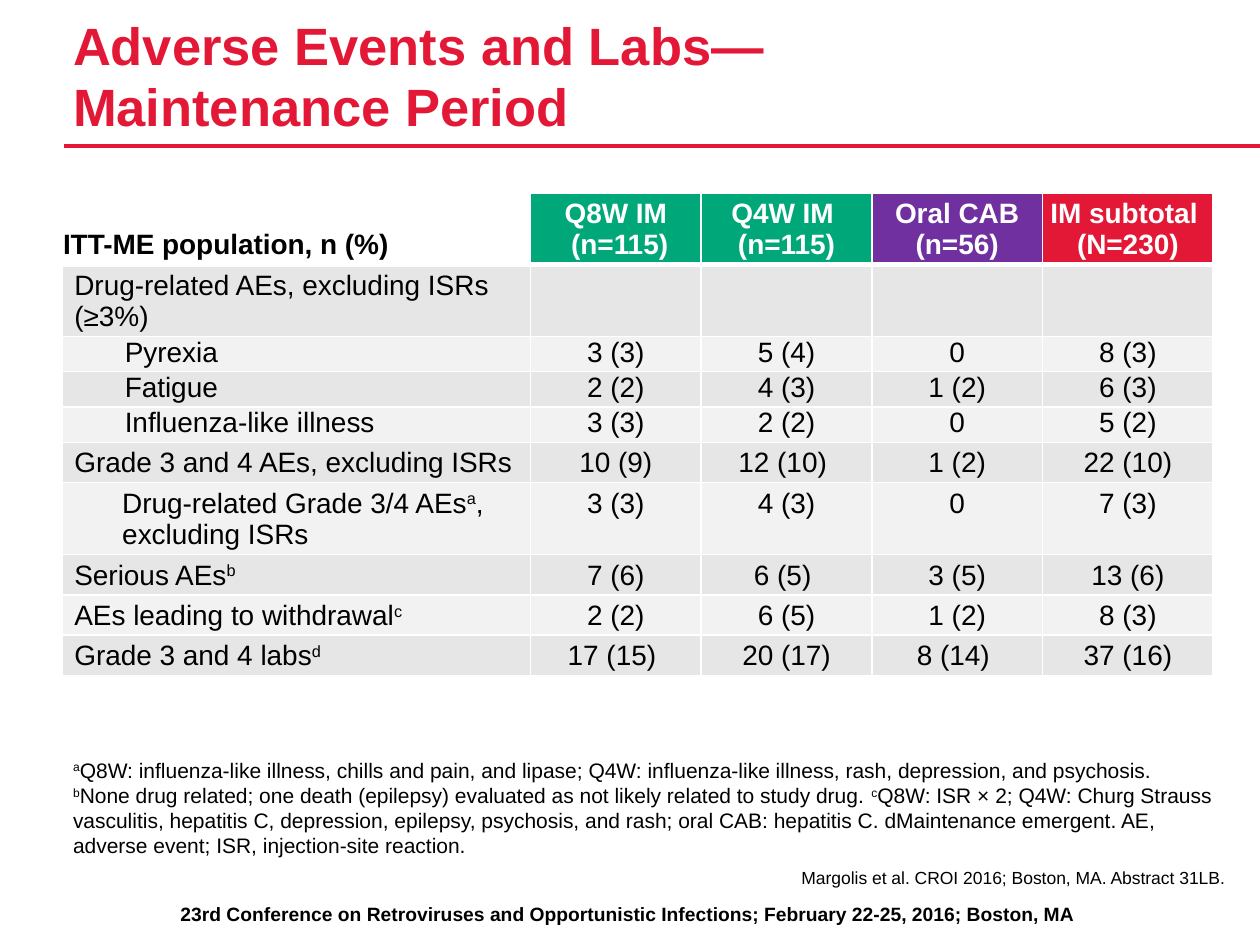
from dataclasses import dataclass

from lxml import etree
from pptx import Presentation
from pptx.dml.color import RGBColor
from pptx.enum import text
from pptx.oxml.ns import qn
from pptx.enum import shapes
from pptx.util import Inches, Pt


@dataclass(frozen=True)
class Theme:
    font: str = "Arial"
    red: str = "E31836"
    green: str = "00A779"
    purple: str = "7030A0"
    black: str = "000000"
    white: str = "FFFFFF"
    bands: tuple = ("E6E6E6", "F2F2F2")
    title: int = 30
    table: int = 16
    note: int = 12
    conference: int = 11
    citation: int = 10


THEME = Theme()
LEFT, CENTER, RIGHT = text.PP_ALIGN.LEFT, text.PP_ALIGN.CENTER, text.PP_ALIGN.RIGHT
BOTTOM = text.MSO_ANCHOR.BOTTOM

# Header text and fill for each column
HEADERS = [
    ("ITT-ME population, n (%)", None),
    ("Q8W IM\n (n=115)", THEME.green),
    ("Q4W IM \n(n=115)", THEME.green),
    ("Oral CAB\n(n=56)", THEME.purple),
    ("IM subtotal \n(N=230)", THEME.red),
]
# Row kind, height, label (superscripts between carets), one value per arm
ROWS = [
    ("main", 0.57, "Drug-related AEs, excluding ISRs (≥3%)", [""] * 4),
    ("event", 0.28, "Pyrexia", ["3 (3)", "5 (4)", "0", "8 (3)"]),
    ("event", 0.28, "Fatigue", ["2 (2)", "4 (3)", "1 (2)", "6 (3)"]),
    ("event", 0.28, "Influenza-like illness", ["3 (3)", "2 (2)", "0", "5 (2)"]),
    ("main", 0.32, "Grade 3 and 4 AEs, excluding ISRs",
     ["10 (9)", "12 (10) ", "1 (2)", "22 (10)"]),
    ("sub", 0.57, "Drug-related Grade 3/4 AEs^a^, excluding ISRs",
     ["3 (3)", "4 (3)", "0", "7 (3)"]),
    ("main", 0.32, "Serious AEs^b^", ["7 (6)", "6 (5) ", "3 (5)", "13 (6)"]),
    ("main", 0.32, "AEs leading to withdrawal^c^", ["2 (2)", "6 (5)", "1 (2)", "8 (3)"]),
    ("main", 0.32, "Grade 3 and 4 labs^d^", ["17 (15) ", "20 (17)", "8 (14) ", "37 (16)"]),
]
FOOTNOTE = (
    "^a^Q8W: influenza-like illness, chills and pain, and lipase; "
    "Q4W: influenza-like illness, rash, depression, and psychosis. \n"
    "^b^None drug related; one death (epilepsy) evaluated as not likely related to "
    "study drug. ^c^Q8W: ISR × 2; Q4W: Churg Strauss vasculitis, hepatitis C, "
    "depression, epilepsy, psychosis, and rash; oral CAB: hepatitis C. "
    "dMaintenance emergent. AE, adverse event; ISR, injection-site reaction."
)


def write(paragraph, content, size, color=THEME.black, bold=False, align=LEFT, spacing=None):
    """Fill a paragraph; parts between carets become superscripts."""
    for line_no, line in enumerate(content.split("\n")):
        if line_no:
            paragraph.add_line_break()
        for part_no, part in enumerate(line.split("^")):
            if not part:
                continue
            run = paragraph.add_run()
            run.text = part
            run.font.name, run.font.size, run.font.bold = THEME.font, Pt(size), bold
            run.font.color.rgb = RGBColor.from_string(color)
            if part_no % 2:
                run.font._element.set("baseline", "30000")
    paragraph.alignment = align
    if spacing:
        paragraph.line_spacing = Pt(spacing)


def set_margins(target, left, top, right, bottom):
    target.margin_left, target.margin_top = Inches(left), Inches(top)
    target.margin_right, target.margin_bottom = Inches(right), Inches(bottom)


def add_title(slide, box):
    title = slide.shapes.title
    title.left, title.top, title.width, title.height = map(Inches, box)
    frame = title.text_frame
    frame.auto_size, frame.vertical_anchor = text.MSO_AUTO_SIZE.NONE, BOTTOM
    set_margins(frame, 0, 0, 0, 0)
    write(frame.paragraphs[0], "Adverse Events and Labs—\nMaintenance Period",
          THEME.title, THEME.red, bold=True, spacing=35)


def add_rule(slide, left, right, y):
    rule = slide.shapes.add_connector(
        shapes.MSO_CONNECTOR.STRAIGHT, Inches(left), Inches(y), Inches(right), Inches(y))
    rule.line.color.rgb = RGBColor.from_string(THEME.red)
    rule.line.width = Pt(2)
    etree.SubElement(rule._element.spPr, qn("a:effectLst"))


def add_note(slide, box, content, size, anchor=text.MSO_ANCHOR.TOP, **style):
    frame = slide.shapes.add_textbox(*map(Inches, box)).text_frame
    frame.word_wrap, frame.vertical_anchor = True, anchor
    set_margins(frame, 0, 0, 0, 0)
    write(frame.paragraphs[0], content, size, **style)


def set_borders(cell, top, bottom):
    props = cell._tc.get_or_add_tcPr()
    for place, (side, width) in enumerate(
            [("lnL", 1), ("lnR", 1), ("lnT", top), ("lnB", bottom)]):
        line = etree.Element(qn(f"a:{side}"), w=str(Pt(width)))
        fill = etree.SubElement(line, qn("a:solidFill"))
        etree.SubElement(fill, qn("a:srgbClr"), val=THEME.white)
        props.insert(place, line)


def paint(cell, color):
    if color:
        cell.fill.solid()
        cell.fill.fore_color.rgb = RGBColor.from_string(color)
    else:
        cell.fill.background()


def fill_header(cell, content, color):
    paint(cell, color)
    set_borders(cell, 1, 3)
    set_margins(cell, 0.01, 0.04, 0.01, 0.03)
    cell.vertical_anchor = BOTTOM
    for number, line in enumerate(content.split("\n")):
        frame = cell.text_frame
        paragraph = frame.add_paragraph() if number else frame.paragraphs[0]
        write(paragraph, line, THEME.table, THEME.white if color else THEME.black,
              bold=True, align=CENTER if color else LEFT, spacing=18)


def fill_body(cell, kind, content, is_label, color, top):
    paint(cell, color)
    set_borders(cell, top, 1)
    if kind == "event":
        side = 0 if is_label else 0.07
        set_margins(cell, side, 0, side, 0.03)
    else:
        set_margins(cell, 0.1, 0.04, 0.1, 0.03)
    paragraph = cell.text_frame.paragraphs[0]
    write(paragraph, content, THEME.table, align=LEFT if is_label else CENTER, spacing=18)
    if is_label and kind != "main":
        name, indent = ("indent", 0.5) if kind == "event" else ("marL", 0.38)
        paragraph._p.get_or_add_pPr().set(name, str(Inches(indent)))


def add_events_table(slide, box, label_width=3.72, header_height=0.57):
    table = slide.shapes.add_table(len(ROWS) + 1, len(HEADERS), *map(Inches, box)).table
    arm_width = (box[2] - label_width) / (len(HEADERS) - 1)
    for number, column in enumerate(table.columns):
        column.width = Inches(arm_width if number else label_width)
    table.rows[0].height = Inches(header_height)
    for number, (content, color) in enumerate(HEADERS):
        fill_header(table.cell(0, number), content, color)
    for row_no, (kind, height, label, values) in enumerate(ROWS, 1):
        table.rows[row_no].height = Inches(height)
        for number, content in enumerate([label, *values]):
            fill_body(table.cell(row_no, number), kind, content, number == 0,
                      THEME.bands[(row_no - 1) % 2], 3 if row_no == 1 else 1)


def main():
    deck = Presentation()
    deck.slide_width, deck.slide_height = Inches(10), Inches(7.5)
    slide = deck.slides.add_slide(deck.slide_layouts[5])

    # Heading
    add_title(slide, (0.58, 0.17, 8.25, 0.92))
    add_rule(slide, 0.51, 10, 1.16)

    # Results
    add_events_table(slide, (0.49, 1.53, 9.14, 3.83))

    # Footnotes, citation and conference line
    add_note(slide, (0.58, 6.41, 9.14, 0.4), FOOTNOTE, THEME.note, anchor=BOTTOM)
    add_note(slide, (0.58, 6.88, 9.14, 0.2),
             "Margolis et al. CROI 2016; Boston, MA. Abstract 31LB.",
             THEME.citation, align=RIGHT)
    add_note(slide, (0.06, 7.11, 9.85, 0.29),
             "23rd Conference on Retroviruses and Opportunistic Infections; "
             "February 22-25, 2016; Boston, MA",
             THEME.conference, anchor=text.MSO_ANCHOR.MIDDLE, bold=True, align=CENTER)
    deck.save("out.pptx")


if __name__ == "__main__":
    main()
